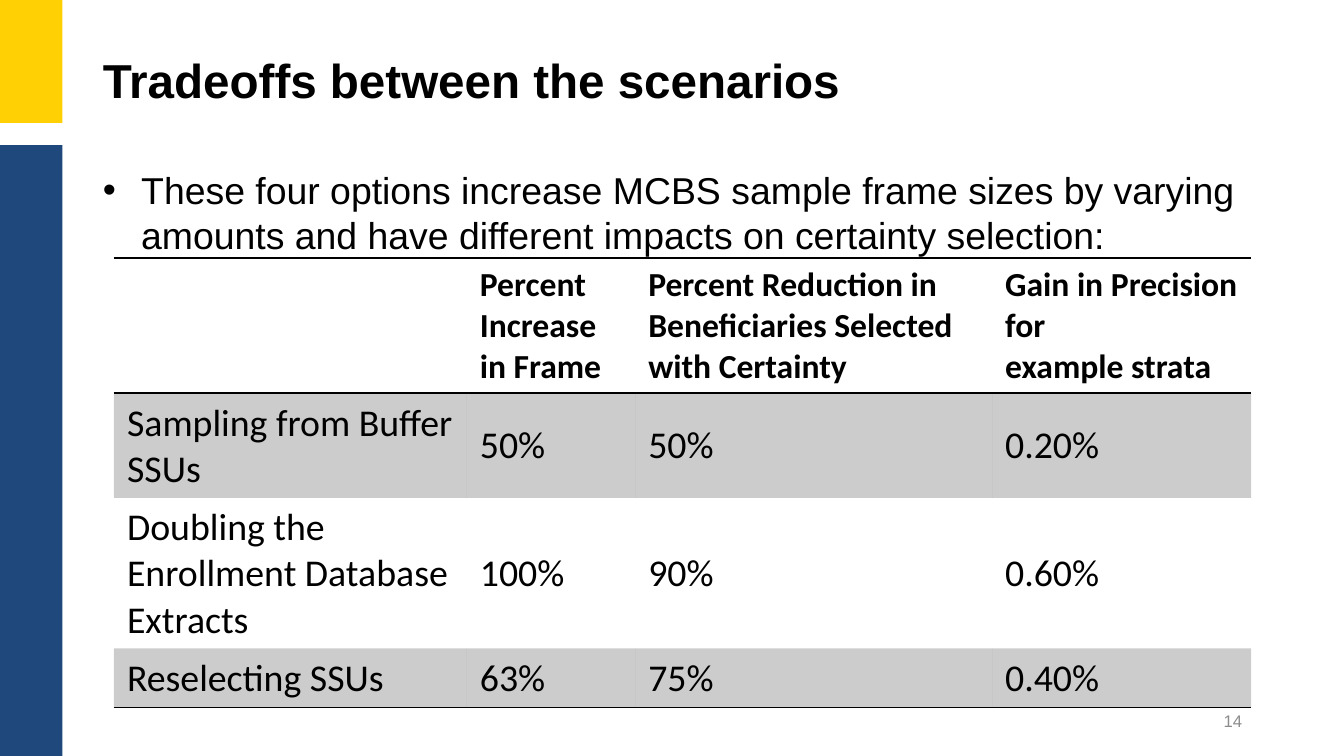
from lxml.etree import SubElement
from pptx import Presentation
from pptx.dml.color import RGBColor
from pptx.enum.shapes import MSO_SHAPE
from pptx.enum.text import MSO_ANCHOR, MSO_AUTO_SIZE, PP_ALIGN
from pptx.oxml import parse_xml
from pptx.oxml.ns import nsdecls, qn
from pptx.util import Inches, Pt

COLORS = {"yellow": "FFD004", "navy": "1F497D", "black": "000000", "gray": "8C8C8C"}
NO_TABLE_STYLE = "{2D5ABB26-0587-4C30-8999-92F81FD0307C}"
COLUMN_WIDTHS = [3.5, 1.67, 3.54, 2.57]
ROW_HEIGHTS = [1.32, 0.88, 1.27, 0.5]
SCENARIOS = [
    ["", "Percent Increase in Frame",
     "Percent Reduction in Beneficiaries Selected with Certainty",
     "Gain in Precision for\vexample strata"],
    ["Sampling from Buffer SSUs", "50%", "50%", "0.20%"],
    ["Doubling the Enrollment Database Extracts", "100%", "90%", "0.60%"],
    ["Reselecting SSUs", "63%", "75%", "0.40%"],
]


def color(name):
    return RGBColor.from_string(COLORS[name])


def place(part, box):
    part.left, part.top, part.width, part.height = map(Inches, box)


def style_runs(paragraph, size, font="Arial", tint="black", bold=False):
    for run in paragraph.runs:
        run.font.size = Pt(size)
        run.font.name = font
        run.font.bold = bold
        run.font.color.rgb = color(tint)


def add_side_band(slide, box):
    """Yellow block, a gap, and a navy block down the left edge."""
    left, top, width, height = box
    for tint, start, end in (("yellow", 0, 1.22), ("navy", 1.44, height)):
        block = slide.shapes.add_shape(
            MSO_SHAPE.RECTANGLE, Inches(left), Inches(top + start),
            Inches(width), Inches(end - start))
        block.shadow.inherit = False
        block.fill.solid()
        block.fill.fore_color.rgb = color(tint)
        block.line.fill.background()


def fill_title(slide, box):
    title = slide.shapes.title
    place(title, box)
    frame = title.text_frame
    frame.text = "Tradeoffs between the scenarios"
    frame.auto_size = MSO_AUTO_SIZE.NONE
    frame.vertical_anchor = MSO_ANCHOR.MIDDLE
    heading = frame.paragraphs[0]
    heading.alignment = PP_ALIGN.LEFT
    heading.line_spacing = 0.9
    style_runs(heading, 34, bold=True)


def fill_body(slide, box):
    body = slide.placeholders[1]
    place(body, box)
    frame = body.text_frame
    frame.text = ("These four options increase MCBS sample frame sizes by varying "
                  "amounts and have different impacts on certainty selection:")
    frame.auto_size = MSO_AUTO_SIZE.NONE
    bullet = frame.paragraphs[0]
    style_runs(bullet, 26.7)
    properties = bullet._p.get_or_add_pPr()
    properties.set("marL", str(Inches(0.38)))
    properties.set("indent", str(Inches(-0.38)))
    SubElement(properties, qn("a:buChar"), char="•")


def add_page_number(slide, box):
    page_number = slide.shapes.add_textbox(*map(Inches, box))
    frame = page_number.text_frame
    frame.word_wrap = True
    frame.vertical_anchor = MSO_ANCHOR.MIDDLE
    frame.text = "14"
    frame.paragraphs[0].alignment = PP_ALIGN.RIGHT
    style_runs(frame.paragraphs[0], 12, tint="gray")


def add_borders(cell, sides):
    properties = cell._tc.get_or_add_tcPr()
    for position, side in enumerate(sides):
        properties.insert(position, parse_xml(
            f'<a:{side} {nsdecls("a")} w="{Pt(1)}"><a:solidFill>'
            f'<a:srgbClr val="{COLORS["black"]}"/></a:solidFill></a:{side}>'))


def shade(cell):
    """Black at 20% opacity."""
    cell.fill.solid()
    cell.fill.fore_color.rgb = color("black")
    tint = cell._tc.tcPr.find(".//" + qn("a:srgbClr"))
    SubElement(tint, qn("a:alpha"), val="20000")


def add_scenario_table(slide, box):
    table = slide.shapes.add_table(
        len(SCENARIOS), len(COLUMN_WIDTHS), *map(Inches, box)).table
    table.horz_banding = False
    table._tbl.tblPr.find(qn("a:tableStyleId")).text = NO_TABLE_STYLE
    for column, width in zip(table.columns, COLUMN_WIDTHS):
        column.width = Inches(width)
    for row, height in zip(table.rows, ROW_HEIGHTS):
        row.height = Inches(height)

    last = len(SCENARIOS) - 1
    for r, values in enumerate(SCENARIOS):
        for c, value in enumerate(values):
            cell = table.cell(r, c)
            cell.margin_left = cell.margin_right = Inches(0.13)
            cell.margin_top = cell.margin_bottom = Inches(0.07)
            cell.vertical_anchor = MSO_ANCHOR.MIDDLE if r else MSO_ANCHOR.TOP
            paragraph = cell.text_frame.paragraphs[0]
            paragraph.text = value
            style_runs(paragraph, 27 if r else 24, "Calibri", bold=r == 0)
            # Odd rows are shaded; rules frame the header and close the table
            if r % 2:
                shade(cell)
            else:
                cell.fill.background()
            if r == 0:
                add_borders(cell, ["lnT", "lnB"])
            elif r == last:
                add_borders(cell, ["lnB"])


def main():
    deck = Presentation()
    deck.slide_width, deck.slide_height = Inches(13.33), Inches(7.5)
    slide = deck.slides.add_slide(deck.slide_layouts[1])
    add_side_band(slide, (0, 0, 0.62, 7.5))
    fill_title(slide, (0.92, 0.22, 11.5, 1.21))
    fill_body(slide, (0.92, 1.61, 11.63, 5.03))
    add_page_number(slide, (9.42, 6.95, 3, 0.4))
    add_scenario_table(slide, (1.13, 2.56, 11.28, 3.97))
    deck.save("out.pptx")


if __name__ == "__main__":
    main()
